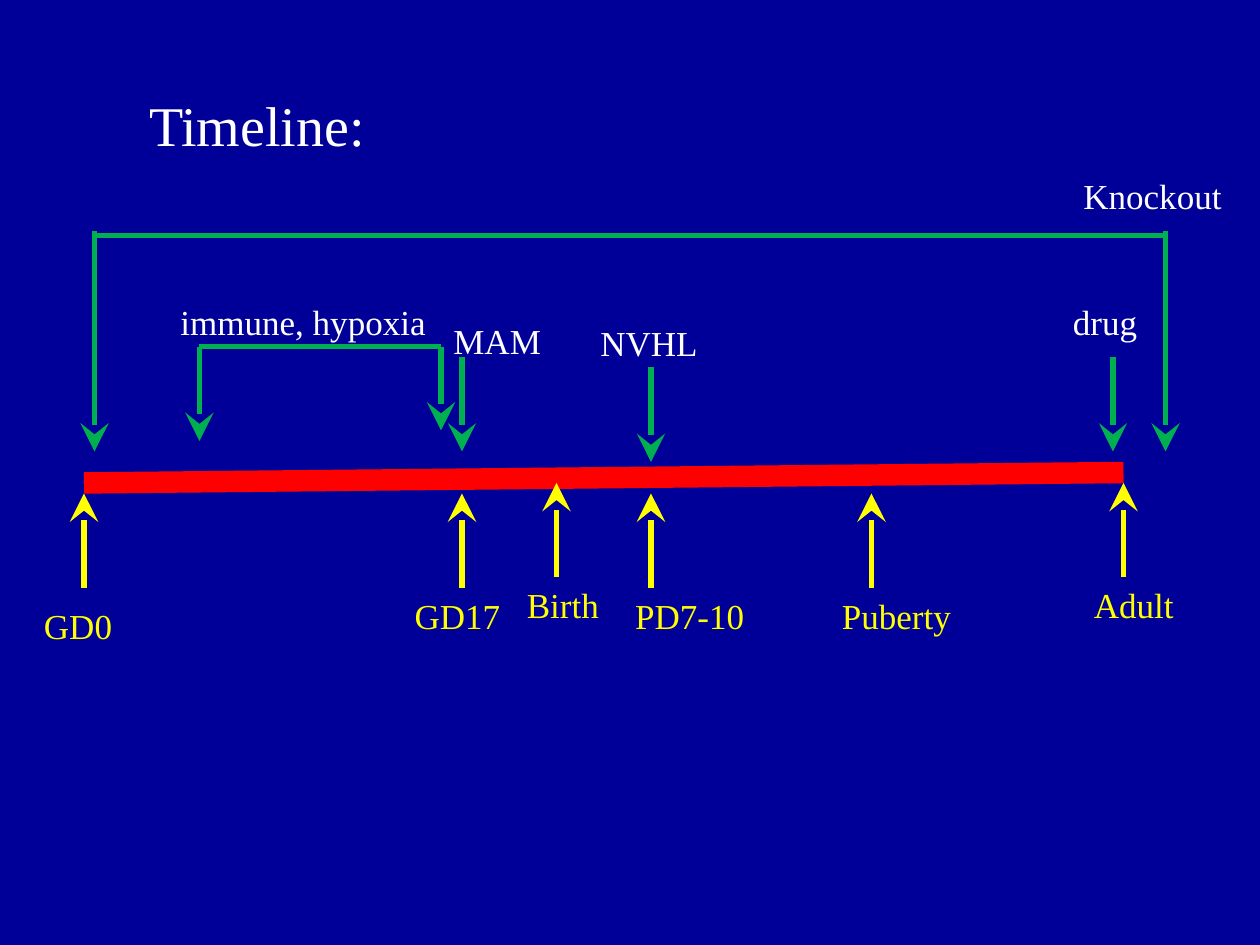
from lxml.etree import SubElement
from pptx import Presentation
from pptx.dml.color import RGBColor
from pptx.enum.shapes import MSO_CONNECTOR
from pptx.enum.text import MSO_ANCHOR, MSO_AUTO_SIZE, PP_ALIGN
from pptx.oxml.ns import qn
from pptx.util import Inches, Pt

NAVY = RGBColor(0x00, 0x00, 0x99)
WHITE = RGBColor(0xFF, 0xFF, 0xFF)
RED = RGBColor(0xFF, 0x00, 0x00)
YELLOW = RGBColor(0xFF, 0xFF, 0x00)
GREEN = RGBColor(0x00, 0xB0, 0x50)
FONT = "Times New Roman"

COLUMNS, ROWS = 120, 90
LABEL_HEIGHT = 5.25
ARROW_LENGTH = 9

# Stage name, arrow column, arrow tip row, label column, label row, label width
STAGES = [
    ("GD0", 8, 47, 3, 57, 9),
    ("GD17", 44, 47, 38.3, 56, 10.7),
    ("Birth", 53, 46, 49, 55, 9.4),
    ("PD7-10", 62, 47, 59.3, 56, 12.8),
    ("Puberty", 83, 47, 79, 56, 12.8),
    ("Adult", 107, 46, 103, 55, 10.1),
]
# Name, arrow column, arrow start row, label column, label row, label width
INTERVENTIONS = [
    ("drug", 106, 34, 101, 28, 8.6),
    ("NVHL", 62, 35, 56, 30, 13),
    ("MAM", 44, 34, 42, 29.8, 10.8),
]


def grid(cells):
    """Length of a number of grid cells, each a twelfth of an inch."""
    return Inches(cells / 12)


def write(frame, text, size=20, color=WHITE, wrap=False):
    frame.word_wrap = wrap
    frame.auto_size = MSO_AUTO_SIZE.SHAPE_TO_FIT_TEXT
    frame.vertical_anchor = MSO_ANCHOR.TOP
    paragraph = frame.paragraphs[0]
    paragraph.alignment = PP_ALIGN.LEFT
    run = paragraph.add_run()
    run.text = text
    run.font.name = FONT
    run.font.size = Pt(size)
    run.font.color.rgb = color


def add_label(shapes, text, column, row, width, **text_format):
    box = shapes.add_textbox(grid(column), grid(row), grid(width), grid(LABEL_HEIGHT))
    write(box.text_frame, text, **text_format)


def add_line(shapes, start, end, color, width=3.25, arrow=False):
    """Line between two (column, row) points, with the arrowhead at the end."""
    line = shapes.add_connector(MSO_CONNECTOR.STRAIGHT, *map(grid, start + end))
    line.line.color.rgb = color
    line.line.width = Pt(width)
    if arrow:
        SubElement(line.line._get_or_add_ln(), qn("a:tailEnd"),
                   type="stealth", w="lg", len="lg")
    SubElement(line._element.spPr, qn("a:effectLst"))


def add_title(slide):
    title = slide.shapes.title
    title.left, title.top = grid(13), grid(8)
    title.width, title.height = grid(23.2), grid(7.7)
    write(title.text_frame, "Timeline:", size=32)


def add_stages(shapes):
    """Red time axis with a yellow arrow and label for each stage."""
    add_line(shapes, (8, 46), (107, 45), RED, width=12.25)
    for name, column, tip, label_column, label_row, width in STAGES:
        add_line(shapes, (column, tip + ARROW_LENGTH), (column, tip), YELLOW, arrow=True)
        add_label(shapes, name, label_column, label_row, width, color=YELLOW)


def add_intervention(shapes, name, column, row, label_column, label_row, width):
    add_line(shapes, (column, row), (column, row + ARROW_LENGTH), GREEN, arrow=True)
    add_label(shapes, name, label_column, label_row, width)


def add_span(shapes, left, right, top, bar_row, left_tip, right_tip):
    """Green bar with an arrow down from each end."""
    add_line(shapes, (left, bar_row), (right, bar_row), GREEN)
    for column, tip in ((left, left_tip), (right, right_tip)):
        add_line(shapes, (column, top), (column, tip), GREEN, arrow=True)


def main():
    presentation = Presentation()
    presentation.slide_width = grid(COLUMNS)
    presentation.slide_height = grid(ROWS)
    slide = presentation.slides.add_slide(presentation.slide_layouts.get_by_name("Title Only"))
    slide.background.fill.solid()
    slide.background.fill.fore_color.rgb = NAVY

    def new_group():
        return slide.shapes.add_group_shape().shapes

    add_title(slide)
    add_stages(new_group())
    for intervention in INTERVENTIONS:
        add_intervention(new_group(), *intervention)

    prenatal = new_group()
    add_span(prenatal, 19, 42, top=33, bar_row=33, left_tip=42, right_tip=41)
    add_label(prenatal, "immune, hypoxia", 16, 28, 25.9)

    knockout = new_group()
    add_span(knockout, 9, 111, top=22, bar_row=22.44, left_tip=43, right_tip=43)
    add_label(knockout, "Knockout", 102, 16, 17, wrap=True)

    presentation.save("out.pptx")


if __name__ == "__main__":
    main()
